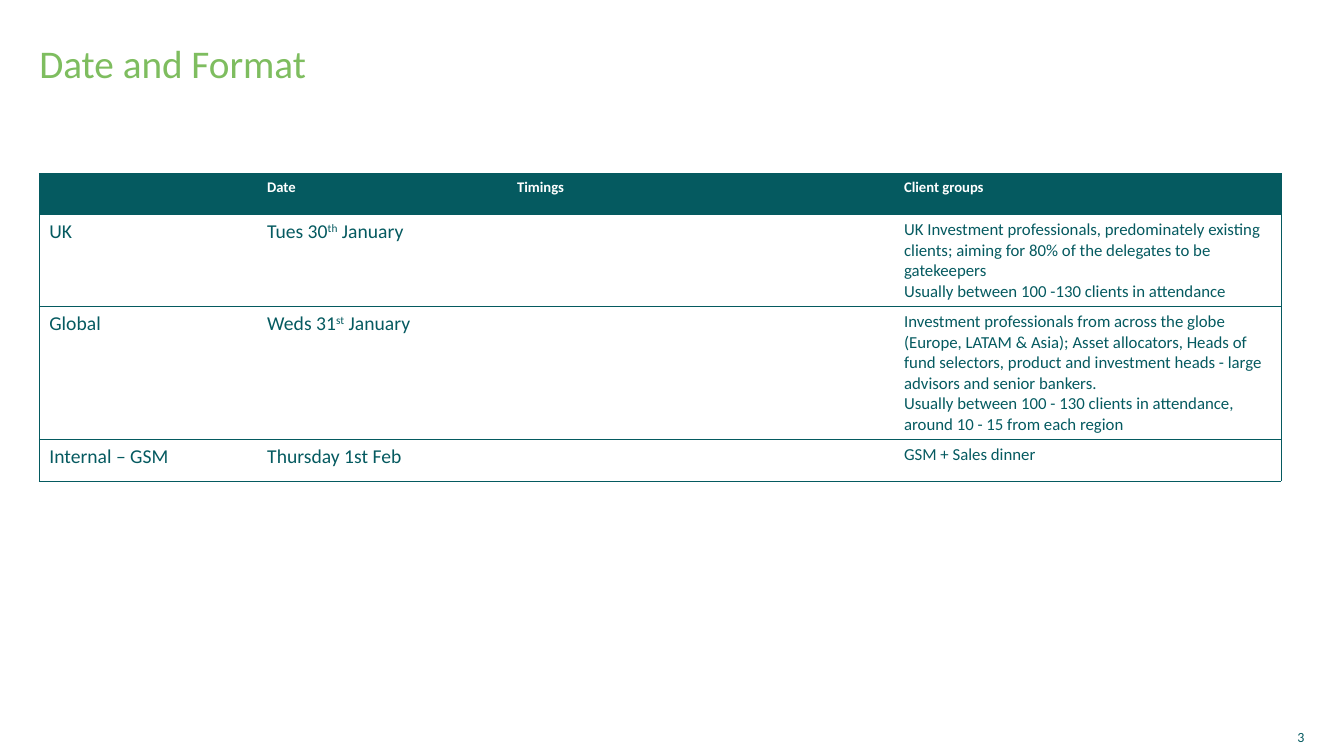
from dataclasses import dataclass

import lxml.etree
import pptx
import pptx.dml.color
import pptx.enum.text
import pptx.oxml.ns
import pptx.util

Cm = pptx.util.Cm
Align = pptx.enum.text.PP_ALIGN
Anchor = pptx.enum.text.MSO_ANCHOR


@dataclass(frozen=True)
class Theme:
    font: str = "Calibri"
    green: str = "7EBD5F"
    teal: str = "055A60"
    white: str = "FFFFFF"
    title: float = 28
    label: float = 14
    note: float = 12
    head: float = 10.5
    page: float = 10
    rule: float = 0.5


@dataclass(frozen=True)
class Span:
    text: str
    raised: bool = False


@dataclass(frozen=True)
class Style:
    size: float
    color: str
    bold: bool = False


@dataclass(frozen=True)
class Event:
    place: str
    date: tuple[Span, ...]
    groups: tuple[str, ...]
    height: float


THEME = Theme()
TITLE = Style(THEME.title, THEME.green)
HEAD = Style(THEME.head, THEME.white, True)
LABEL = Style(THEME.label, THEME.teal)
NOTE = Style(THEME.note, THEME.teal)
PAGE = Style(THEME.page, THEME.teal)

LEFT = 0.99
WIDTHS = (5.49, 6.3, 9.75, 9.75)
HEAD_HEIGHT = 1.04
HEADS = ("", "Date", "Timings", "Client groups")
EVENTS = (
    Event(
        "UK",
        (Span("Tues 30"), Span("th", True), Span(" January")),
        (
            "UK Investment professionals, predominately existing clients; "
            "aiming for 80% of the delegates to be gatekeepers",
            "Usually between 100 -130 clients in attendance",
        ),
        2.32,
    ),
    Event(
        "Global",
        (Span("Weds 31"), Span("st", True), Span(" January")),
        (
            "Investment professionals from across the globe (Europe, LATAM & Asia); "
            "Asset allocators, Heads of fund selectors, product and investment heads "
            "- large advisors and senior bankers.",
            "Usually between 100 - 130 clients in attendance, "
            "around 10 - 15 from each region",
        ),
        3.35,
    ),
    Event(
        "Internal – GSM",
        (Span("Thursday 1st Feb"),),
        ("GSM + Sales dinner",),
        1.04,
    ),
)


def add_span(para, span: Span, style: Style) -> None:
    run = para.add_run()
    run.text = span.text
    run.font.name = THEME.font
    run.font.size = pptx.util.Pt(style.size)
    run.font.bold = style.bold
    run.font.color.rgb = pptx.dml.color.RGBColor.from_string(style.color)
    if span.raised:
        run._r.get_or_add_rPr().set("baseline", "30000")


def fill_text(frame, lines: tuple[tuple[Span, ...], ...], style: Style) -> None:
    for index, line in enumerate(lines):
        para = frame.add_paragraph() if index else frame.paragraphs[0]
        for span in line:
            add_span(para, span, style)


def set_rules(cell, first: bool, last: bool) -> None:
    qn = pptx.oxml.ns.qn
    props = cell._tc.get_or_add_tcPr()
    sides = (("lnL", first), ("lnR", last), ("lnT", True), ("lnB", True))
    for index, (side, shown) in enumerate(sides):
        line = lxml.etree.Element(qn(f"a:{side}"), w=str(pptx.util.Pt(THEME.rule)))
        if shown:
            fill = lxml.etree.SubElement(line, qn("a:solidFill"))
            lxml.etree.SubElement(fill, qn("a:srgbClr"), val=THEME.teal)
        else:
            lxml.etree.SubElement(line, qn("a:noFill"))
        props.insert(index, line)


def add_title(slide, text: str) -> None:
    title = slide.shapes.title
    title.left, title.top, title.width, title.height = map(Cm, (LEFT, 0.99, 31.88, 1.4))
    frame = title.text_frame
    frame.margin_left = frame.margin_right = 0
    frame.margin_top = frame.margin_bottom = Cm(0.13)
    frame.vertical_anchor = Anchor.TOP
    frame.auto_size = pptx.enum.text.MSO_AUTO_SIZE.NONE
    fill_text(frame, ((Span(text),),), TITLE)
    frame.paragraphs[0].alignment = Align.LEFT
    frame.paragraphs[0].line_spacing = 0.9


def add_page(slide, text: str) -> None:
    box = slide.shapes.add_textbox(*map(Cm, (28.04, 18.08, 4.83, 0.97)))
    frame = box.text_frame
    frame.word_wrap = True
    frame.margin_right = 0
    frame.vertical_anchor = Anchor.MIDDLE
    fill_text(frame, ((Span(text),),), PAGE)
    frame.paragraphs[0].alignment = Align.RIGHT


def add_events(slide) -> None:
    heights = (HEAD_HEIGHT, *(event.height for event in EVENTS))
    table = slide.shapes.add_table(
        len(heights), len(WIDTHS), Cm(LEFT), Cm(4.37), Cm(sum(WIDTHS)), Cm(sum(heights))
    ).table
    table.horz_banding = False
    for column, width in zip(table.columns, WIDTHS):
        column.width = Cm(width)
    for index, (row, height) in enumerate(zip(table.rows, heights)):
        row.height = Cm(height)
        for place, cell in enumerate(row.cells):
            if index:
                cell.fill.background()
            else:
                cell.fill.solid()
                cell.fill.fore_color.rgb = pptx.dml.color.RGBColor.from_string(THEME.teal)
            set_rules(cell, place == 0, place == len(WIDTHS) - 1)
    for place, head in enumerate(HEADS):
        if head:
            fill_text(table.cell(0, place).text_frame, ((Span(head),),), HEAD)
    for index, event in enumerate(EVENTS, 1):
        fill_text(table.cell(index, 0).text_frame, ((Span(event.place),),), LABEL)
        fill_text(table.cell(index, 1).text_frame, (event.date,), LABEL)
        notes = tuple((Span(text),) for text in event.groups)
        fill_text(table.cell(index, 3).text_frame, notes, NOTE)


def main() -> None:
    deck = pptx.Presentation()
    deck.slide_width, deck.slide_height = Cm(33.87), Cm(19.05)
    slide = deck.slides.add_slide(deck.slide_layouts.get_by_name("Title Only"))
    add_title(slide, "Date and Format")
    add_page(slide, "3")
    add_events(slide)
    deck.save("out.pptx")


if __name__ == "__main__":
    main()
